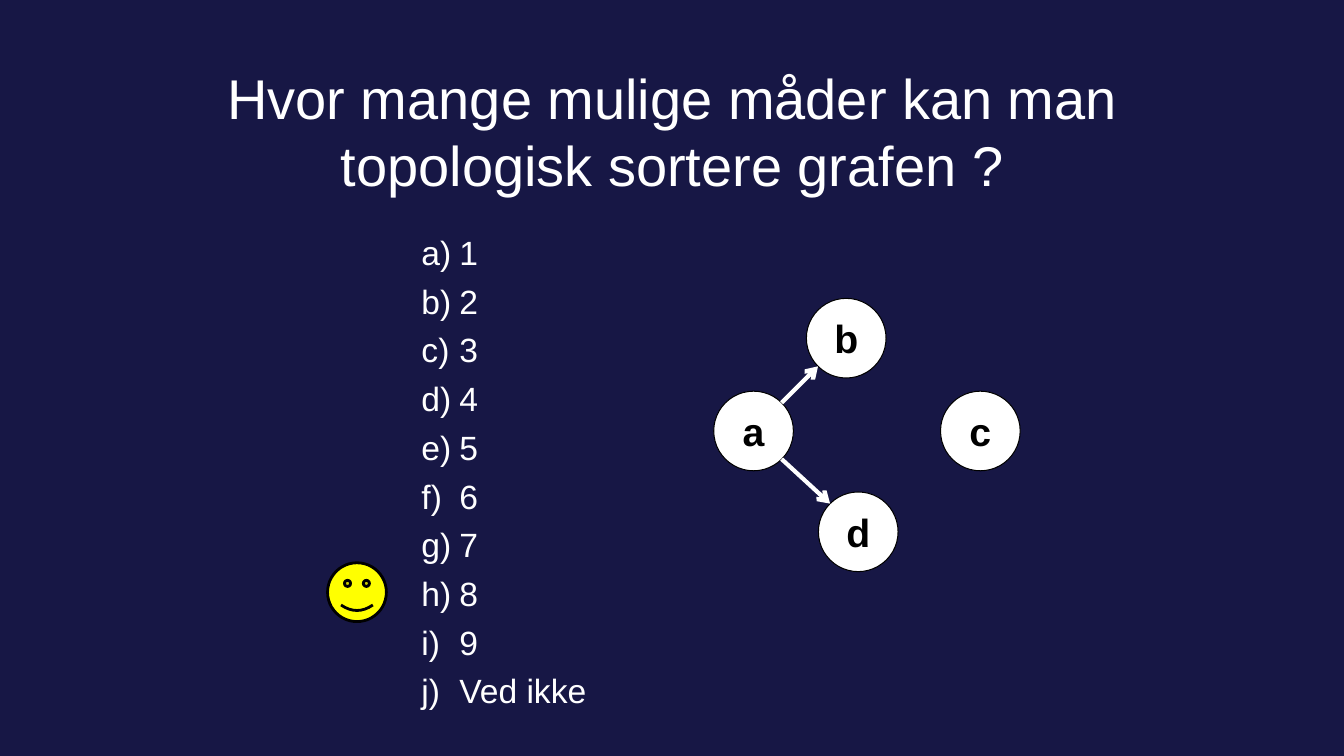
from math import sqrt

from lxml.etree import SubElement
from pptx import Presentation
from pptx.dml.color import RGBColor
from pptx.enum.shapes import MSO_CONNECTOR, MSO_SHAPE
from pptx.enum.text import MSO_ANCHOR, PP_ALIGN
from pptx.oxml.ns import qn
from pptx.util import Pt

NAVY, WHITE, BLACK, YELLOW = "171745", "FFFFFF", "000000", "FFFF00"
NODE_SIZE = 56.9
NODES = {"a": (509.8, 279.4), "b": (576, 213.1), "c": (671.8, 279.4), "d": (584.6, 351.4)}
EDGES = [("a", "b"), ("a", "d")]
ANSWERS = [str(number) for number in range(1, 10)] + ["Ved ikke"]


def color(hex_string):
    return RGBColor.from_string(hex_string)


def box(left, top, width, height):
    return Pt(left), Pt(top), Pt(width), Pt(height)


def format_text(paragraph, size, hex_string, bold=False):
    for run in paragraph.runs:
        run.font.name = "Arial"
        run.font.size = Pt(size)
        run.font.bold = bold
        run.font.color.rgb = color(hex_string)


def add_title(slide, question):
    title = slide.shapes.title
    title.left, title.top, title.width, title.height = box(120, 42, 720, 102)
    frame = title.text_frame
    frame.text = question
    frame.word_wrap = True
    frame.vertical_anchor = MSO_ANCHOR.MIDDLE
    frame.paragraphs[0].alignment = PP_ALIGN.CENTER
    format_text(frame.paragraphs[0], 40, WHITE)


def add_answers(slide, answers):
    frame = slide.shapes.add_textbox(*box(294, 162, 196.5, 360)).text_frame
    frame.word_wrap = True
    frame.text = "\n".join(answers)
    for paragraph in frame.paragraphs:
        paragraph.space_before = Pt(6)
        format_text(paragraph, 24, WHITE)
        # Lettered list with a hanging indent
        properties = paragraph._p.get_or_add_pPr()
        properties.set("marL", str(Pt(27)))
        properties.set("indent", str(-Pt(27)))
        SubElement(properties, qn("a:buFont"), typeface="Arial")
        SubElement(properties, qn("a:buAutoNum"), type="alphaLcParenR")


def add_outlined(slide, kind, bounds, fill, line_width):
    shape = slide.shapes.add_shape(kind, *box(*bounds))
    shape.shadow.inherit = False
    shape.fill.solid()
    shape.fill.fore_color.rgb = color(fill)
    shape.line.color.rgb = color(BLACK)
    shape.line.width = Pt(line_width)
    return shape


def add_node(slide, label):
    bounds = (*NODES[label], NODE_SIZE, NODE_SIZE)
    node = add_outlined(slide, MSO_SHAPE.OVAL, bounds, WHITE, 0.75)
    frame = node.text_frame
    frame.text = label
    frame.word_wrap = False
    frame.vertical_anchor = MSO_ANCHOR.MIDDLE
    frame.paragraphs[0].alignment = PP_ALIGN.CENTER
    format_text(frame.paragraphs[0], 28, BLACK, bold=True)


def rim_point(label, right, down):
    """Point on a node's rim, 45 degrees off the axes; right and down are 1 or -1."""
    left, top = NODES[label]
    radius = NODE_SIZE / 2
    reach = radius / sqrt(2)
    return Pt(left + radius + right * reach), Pt(top + radius + down * reach)


def add_edge(slide, source, target):
    down = 1 if NODES[target][1] > NODES[source][1] else -1
    start, end = rim_point(source, 1, down), rim_point(target, -1, -down)
    edge = slide.shapes.add_connector(MSO_CONNECTOR.STRAIGHT, *start, *end)
    edge.line.color.rgb = color(WHITE)
    edge.line.width = Pt(3)
    SubElement(edge.line._get_or_add_ln(), qn("a:tailEnd"), type="arrow")
    SubElement(edge._element.spPr, qn("a:effectLst"))


def main():
    presentation = Presentation()
    presentation.slide_width, presentation.slide_height = Pt(960), Pt(540)
    slide = presentation.slides.add_slide(presentation.slide_layouts[5])
    slide.background.fill.solid()
    slide.background.fill.fore_color.rgb = color(NAVY)

    # Question and possible answers
    add_title(slide, "Hvor mange mulige måder kan man topologisk sortere grafen ?")
    add_answers(slide, ANSWERS)

    # Smiley beside the right answer
    smiley = add_outlined(slide, MSO_SHAPE.SMILEY_FACE, (234, 402, 42, 42), YELLOW, 2)
    smiley.adjustments[0] = 0.047

    # Graph
    for label in NODES:
        add_node(slide, label)
    for source, target in EDGES:
        add_edge(slide, source, target)

    presentation.save("out.pptx")


if __name__ == "__main__":
    main()
